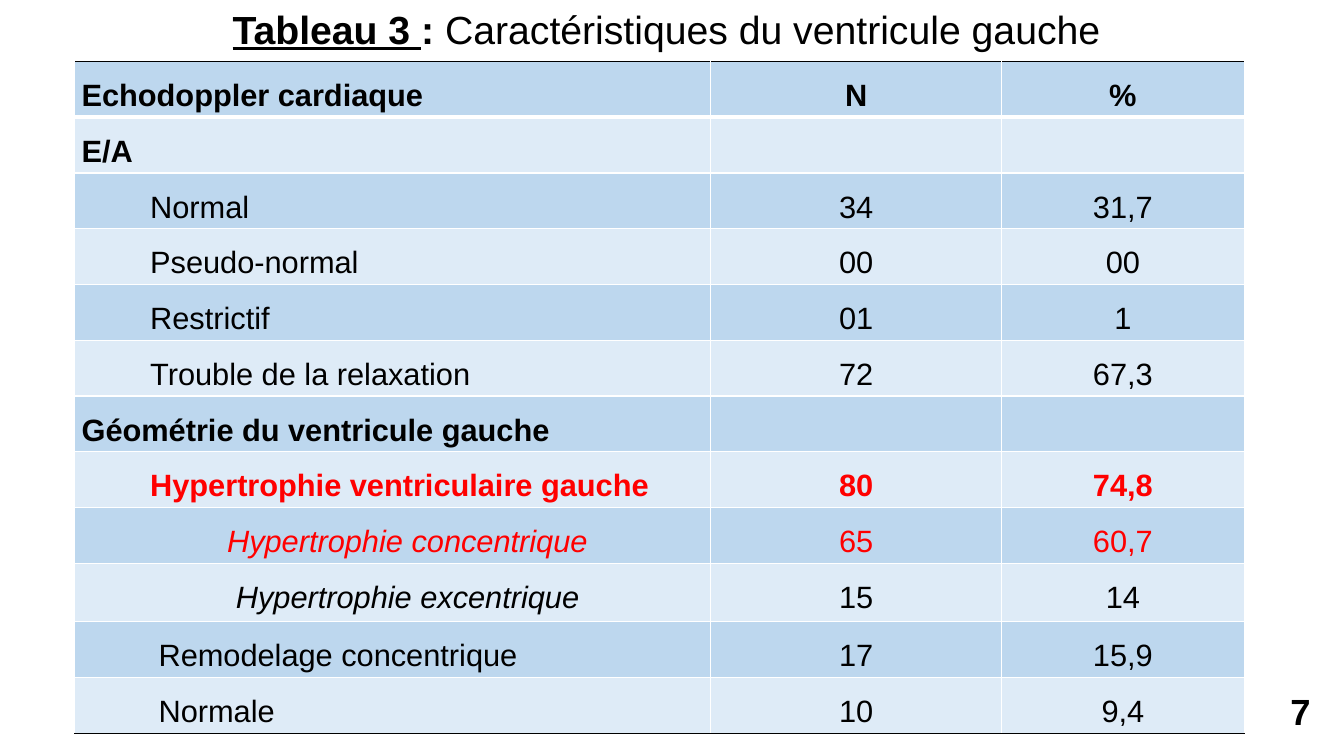
from dataclasses import dataclass

from lxml.etree import SubElement
from pptx import Presentation
from pptx.dml.color import RGBColor
from pptx.enum.text import MSO_ANCHOR as Anchor
from pptx.enum.text import MSO_AUTO_SIZE as AutoSize
from pptx.enum.text import PP_ALIGN as Align
from pptx.oxml.ns import qn
from pptx.slide import Slide
from pptx.table import _Cell as Cell
from pptx.util import Pt

EMU_PER_PX = 3048


@dataclass(frozen=True)
class Theme:
    font: str = "Arial"
    ink: str = "000000"
    alert: str = "FF0000"
    rule: str = "FFFFFF"
    bands: tuple[str, str] = ("BDD7EE", "DEEBF7")
    title_size: int = 28
    number_size: int = 26
    table_size: int = 22


@dataclass(frozen=True)
class Box:
    left: int
    top: int
    width: int
    height: int

    def emu(self) -> tuple[int, int, int, int]:
        return px(self.left), px(self.top), px(self.width), px(self.height)


@dataclass(frozen=True)
class Measure:
    label: str
    count: str = ""
    percent: str = ""
    indent: int = 0
    bold: bool = False
    italic: bool = False
    alert: bool = False
    height: int = 166


THEME = Theme()
TITLE_BOX = Box(222, 0, 3522, 171)
NUMBER_BOX = Box(3018, 2049, 912, 135)
TABLE_LEFT, TABLE_TOP = 222, 183
COLUMN_WIDTHS = (1893, 866, 722)
CELL_INSET = 21

MEASURES = (
    Measure("Echodoppler cardiaque", "N", "%", bold=True),
    Measure("E/A", bold=True),
    Measure("Normal", "34", "31,7", indent=204),
    Measure("Pseudo-normal", "00", "00", indent=204),
    Measure("Restrictif", "01", "1", indent=204),
    Measure("Trouble de la relaxation", "72", "67,3", indent=204),
    Measure("Géométrie du ventricule gauche", bold=True),
    Measure("Hypertrophie ventriculaire gauche", "80", "74,8", indent=204, bold=True, alert=True),
    Measure("Hypertrophie concentrique", "65", "60,7", indent=433, italic=True, alert=True),
    Measure("Hypertrophie excentrique", "15", "14", indent=459, italic=True, height=174),
    Measure("Remodelage concentrique", "17", "15,9", indent=229),
    Measure("Normale", "10", "9,4", indent=229),
)


def px(length: int) -> int:
    return length * EMU_PER_PX


def style_font(font, size: int, color: str = THEME.ink) -> None:
    font.name = THEME.font
    font.size = Pt(size)
    font.color.rgb = RGBColor.from_string(color)


def add_border(cell: Cell, side: str, color: str, width: int) -> None:
    line = SubElement(cell._tc.get_or_add_tcPr(), qn(f"a:ln{side}"), w=str(Pt(width)))
    fill = SubElement(line, qn("a:solidFill"))
    SubElement(fill, qn("a:srgbClr"), val=color)


def draw_title(page: Slide) -> None:
    title = page.shapes.title
    title.left, title.top, title.width, title.height = TITLE_BOX.emu()
    frame = title.text_frame
    frame.word_wrap = True
    frame.auto_size = AutoSize.SHAPE_TO_FIT_TEXT
    frame.vertical_anchor = Anchor.TOP
    para = frame.paragraphs[0]
    para.alignment = Align.CENTER
    style_font(para.font, THEME.title_size)
    for text, bold, underline in (
        ("Tableau 3 ", True, True),
        (": ", True, False),
        ("Caractéristiques du ventricule gauche", False, False),
    ):
        span = para.add_run()
        span.text = text
        span.font.bold = bold
        span.font.underline = underline


def draw_number(page: Slide) -> None:
    frame = page.shapes.add_textbox(*NUMBER_BOX.emu()).text_frame
    frame.word_wrap = True
    frame.vertical_anchor = Anchor.MIDDLE
    para = frame.paragraphs[0]
    para.text = "7"
    para.alignment = Align.RIGHT
    style_font(para.font, THEME.number_size)
    para.font.bold = True


def draw_cell(cell: Cell, measure: Measure, row: int, column: int) -> None:
    is_label = column == 0
    cell.margin_left = px(CELL_INSET + (measure.indent if is_label else 0))
    cell.margin_right = px(CELL_INSET)
    cell.margin_top = cell.margin_bottom = 0
    para = cell.text_frame.paragraphs[0]
    para.text = (measure.label, measure.count, measure.percent)[column]
    para.alignment = Align.JUSTIFY if is_label else Align.CENTER
    para.line_spacing = 1.5
    style_font(para.font, THEME.table_size, THEME.alert if measure.alert else THEME.ink)
    para.font.bold = measure.bold
    para.font.italic = measure.italic and is_label

    last = len(MEASURES) - 1
    add_border(cell, "L", THEME.rule, 1)
    add_border(cell, "R", THEME.rule, 1)
    add_border(cell, "T", THEME.ink if row == 0 else THEME.rule, 3 if row == 1 else 1)
    add_border(cell, "B", THEME.ink if row == last else THEME.rule, 3 if row == 0 else 1)
    cell.fill.solid()
    cell.fill.fore_color.rgb = RGBColor.from_string(THEME.bands[row % 2])


def draw_table(page: Slide) -> None:
    height = sum(measure.height for measure in MEASURES)
    box = Box(TABLE_LEFT, TABLE_TOP, sum(COLUMN_WIDTHS), height)
    table = page.shapes.add_table(len(MEASURES), len(COLUMN_WIDTHS), *box.emu()).table
    table.first_row = False
    table.horz_banding = False
    for column, width in zip(table.columns, COLUMN_WIDTHS):
        column.width = px(width)
    for row, measure in enumerate(MEASURES):
        table.rows[row].height = px(measure.height)
        for column in range(len(COLUMN_WIDTHS)):
            draw_cell(table.cell(row, column), measure, row, column)


def main() -> None:
    deck = Presentation()
    deck.slide_width, deck.slide_height = px(4000), px(2250)
    page = deck.slides.add_slide(deck.slide_layouts[5])
    draw_number(page)
    draw_table(page)
    draw_title(page)
    deck.save("out.pptx")


if __name__ == "__main__":
    main()
